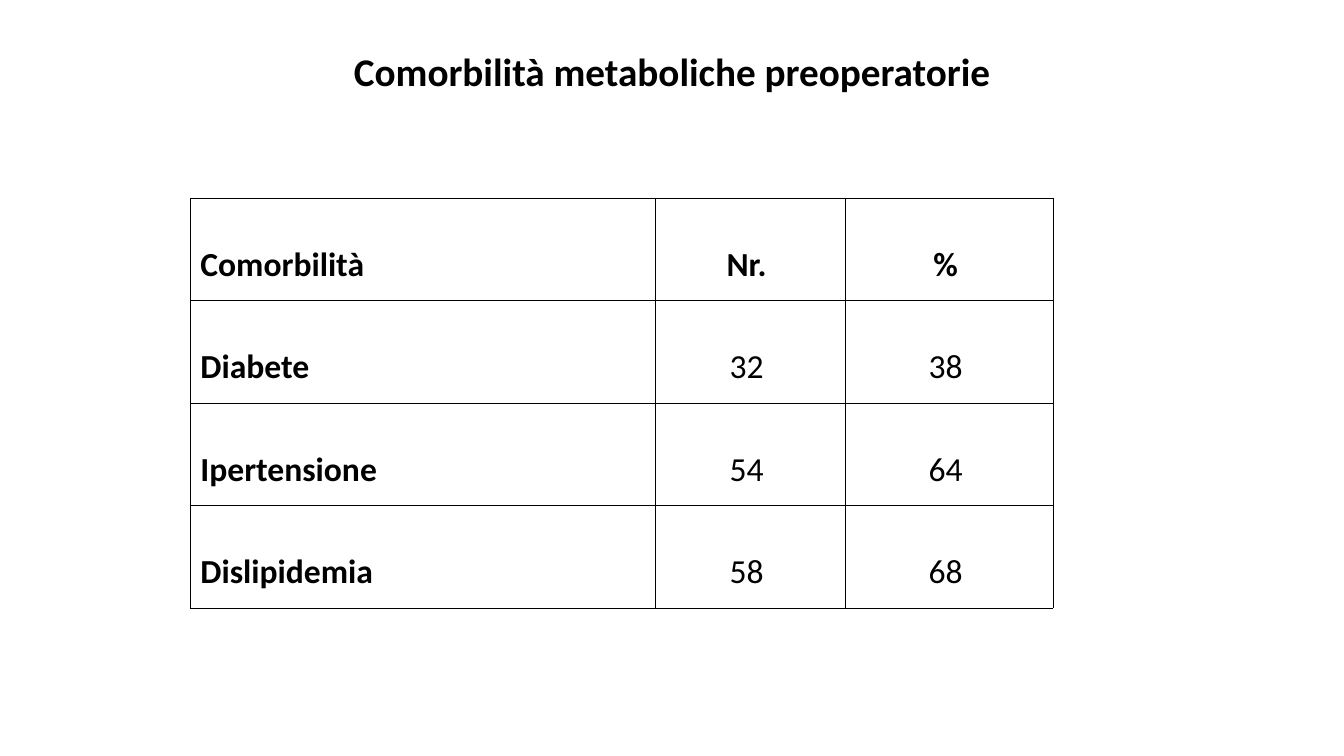
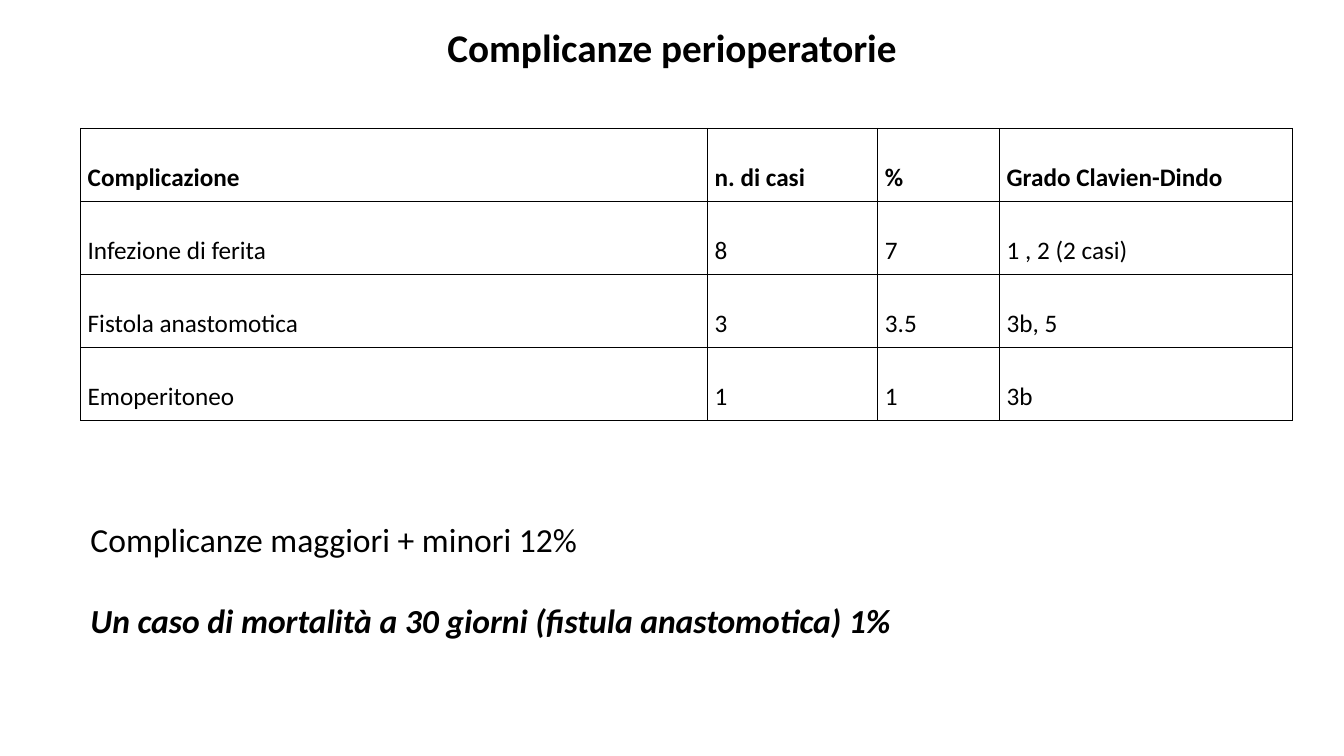
"""Build two slides on preoperative comorbidities and perioperative complications."""
import dataclasses

import lxml.etree
import pptx
import pptx.dml.color
import pptx.enum.text
import pptx.oxml.ns
import pptx.util

Cm = pptx.util.Cm
Pt = pptx.util.Pt
ALIGN = pptx.enum.text.PP_ALIGN
ANCHOR = pptx.enum.text.MSO_ANCHOR
AUTO_SIZE = pptx.enum.text.MSO_AUTO_SIZE


@dataclasses.dataclass(frozen=True)
class Theme:
    """Colours, type sizes and shared measures."""
    font: str = "Calibri"
    ink: str = "000000"
    title_size: int = 28
    large_size: int = 24
    small_size: int = 18
    line_height: float = 1.22
    border_width: float = 0.6
    title_left: float = 2.33
    title_width: float = 29.21


THEME = Theme()


@dataclasses.dataclass(frozen=True)
class TableStyle:
    """Text size, cell padding (left, top, right, bottom) and value alignment."""
    size: int
    padding: tuple
    value_align: ALIGN
    value_right: float
    bold_labels: bool


COMORBIDITY_STYLE = TableStyle(THEME.large_size, (0.25, 0.13, 0.25, 0.13), ALIGN.CENTER, 0.44, True)
COMPLICATION_STYLE = TableStyle(THEME.small_size, (0.18, 0.1, 0.18, 0.1), ALIGN.JUSTIFY, 0.18, False)


def add_run(para, text, size, bold=False, italic=False):
    """Append one formatted run to a paragraph."""
    span = para.add_run()
    span.text = text
    span.font.name = THEME.font
    span.font.size = Pt(size)
    span.font.bold = bold
    span.font.italic = italic
    span.font.color.rgb = pptx.dml.color.RGBColor.from_string(THEME.ink)


def add_page(deck, title, title_height):
    """Add a title-only page with its title centred in a band at the top."""
    page = deck.slides.add_slide(deck.slide_layouts[5])
    box = page.shapes.title
    box.left, box.top = Cm(THEME.title_left), Cm(0)
    box.width, box.height = Cm(THEME.title_width), Cm(title_height)
    frame = box.text_frame
    frame.auto_size = AUTO_SIZE.NONE
    frame.vertical_anchor = ANCHOR.MIDDLE
    para = frame.paragraphs[0]
    para.alignment = ALIGN.CENTER
    para.line_spacing = 0.9
    add_run(para, title, THEME.title_size, bold=True)
    return page


def add_borders(cell):
    """Draw a thin solid line on all four sides of a cell."""
    properties = cell._tc.get_or_add_tcPr()
    qn = pptx.oxml.ns.qn
    for side in ("a:lnL", "a:lnR", "a:lnT", "a:lnB"):
        line = lxml.etree.SubElement(properties, qn(side), w=str(Pt(THEME.border_width)))
        fill = lxml.etree.SubElement(line, qn("a:solidFill"))
        lxml.etree.SubElement(fill, qn("a:srgbClr"), val=THEME.ink)


def format_cell(cell, text, style, is_header, is_label):
    """Fill in a cell, its text set one line below the top padding."""
    left, top, right, bottom = style.padding
    cell.margin_left = Cm(left)
    cell.margin_top = Cm(top) + Pt(style.size * THEME.line_height)
    cell.margin_right = Cm(right if is_label else style.value_right)
    cell.margin_bottom = Cm(bottom)
    cell.vertical_anchor = ANCHOR.TOP
    add_borders(cell)
    cell.fill.background()
    para = cell.text_frame.paragraphs[0]
    para.alignment = ALIGN.JUSTIFY if is_label else style.value_align
    add_run(para, text, style.size, bold=is_header or (is_label and style.bold_labels))


def add_grid(page, left, top, widths, row_height, rows, style):
    """Add a bordered table with a header row and a label column."""
    frame = page.shapes.add_table(len(rows), len(widths), Cm(left), Cm(top),
                                  Cm(sum(widths)), Cm(row_height * len(rows)))
    table = frame.table
    table.horz_banding = False
    table.first_row = False
    for column, width in zip(table.columns, widths):
        column.width = Cm(width)
    for row_index, texts in enumerate(rows):
        table.rows[row_index].height = Cm(row_height)
        for column_index, text in enumerate(texts):
            format_cell(table.cell(row_index, column_index), text, style,
                        row_index == 0, column_index == 0)


def add_notes_box(page, left, top, width, height, lines):
    """Add a text box whose (text, emphasised) lines are one line apart."""
    box = page.shapes.add_textbox(Cm(left), Cm(top), Cm(width), Cm(height))
    frame = box.text_frame
    frame.word_wrap = True
    frame.auto_size = AUTO_SIZE.SHAPE_TO_FIT_TEXT
    for index, (text, emphasised) in enumerate(lines):
        para = frame.add_paragraph() if index else frame.paragraphs[0]
        if index:
            para.space_before = Pt(THEME.large_size * THEME.line_height)
        add_run(para, text, THEME.large_size, bold=emphasised, italic=emphasised)


def add_comorbidities(deck):
    """Build the page on metabolic comorbidities."""
    page = add_page(deck, "Comorbilità metaboliche preoperatorie", 3.74)
    rows = [
        ("Comorbilità", "Nr.", "%"),
        ("Diabete", "32", "38"),
        ("Ipertensione", "54", "64"),
        ("Dislipidemia", "58", "68"),
    ]
    add_grid(page, 4.8, 5, (11.71, 4.8, 5.23), 2.58, rows, COMORBIDITY_STYLE)


def add_complications(deck):
    """Build the page on perioperative complications."""
    page = add_page(deck, "Complicanze perioperatorie", 2.52)
    rows = [
        ("Complicazione", "n. di casi", "%", "Grado Clavien-Dindo"),
        ("Infezione di ferita", "8", "7", "1 , 2 (2 casi)"),
        ("Fistola anastomotica", "3", "3.5", "3b, 5"),
        ("Emoperitoneo", "1", "1", "3b"),
    ]
    add_grid(page, 2.03, 3.23, (15.8, 4.29, 3.07, 7.37), 1.84, rows, COMPLICATION_STYLE)
    add_notes_box(page, 2.03, 12.95, 26.09, 3.33, [
        ("Complicanze maggiori + minori 12%", False),
        ("Un caso di mortalità a 30 giorni (fistula anastomotica) 1%", True),
    ])


def main():
    """Create and save the deck."""
    deck = pptx.Presentation()
    deck.slide_width, deck.slide_height = Cm(33.87), Cm(19.05)
    add_comorbidities(deck)
    add_complications(deck)
    deck.save("out.pptx")


if __name__ == "__main__":
    main()
